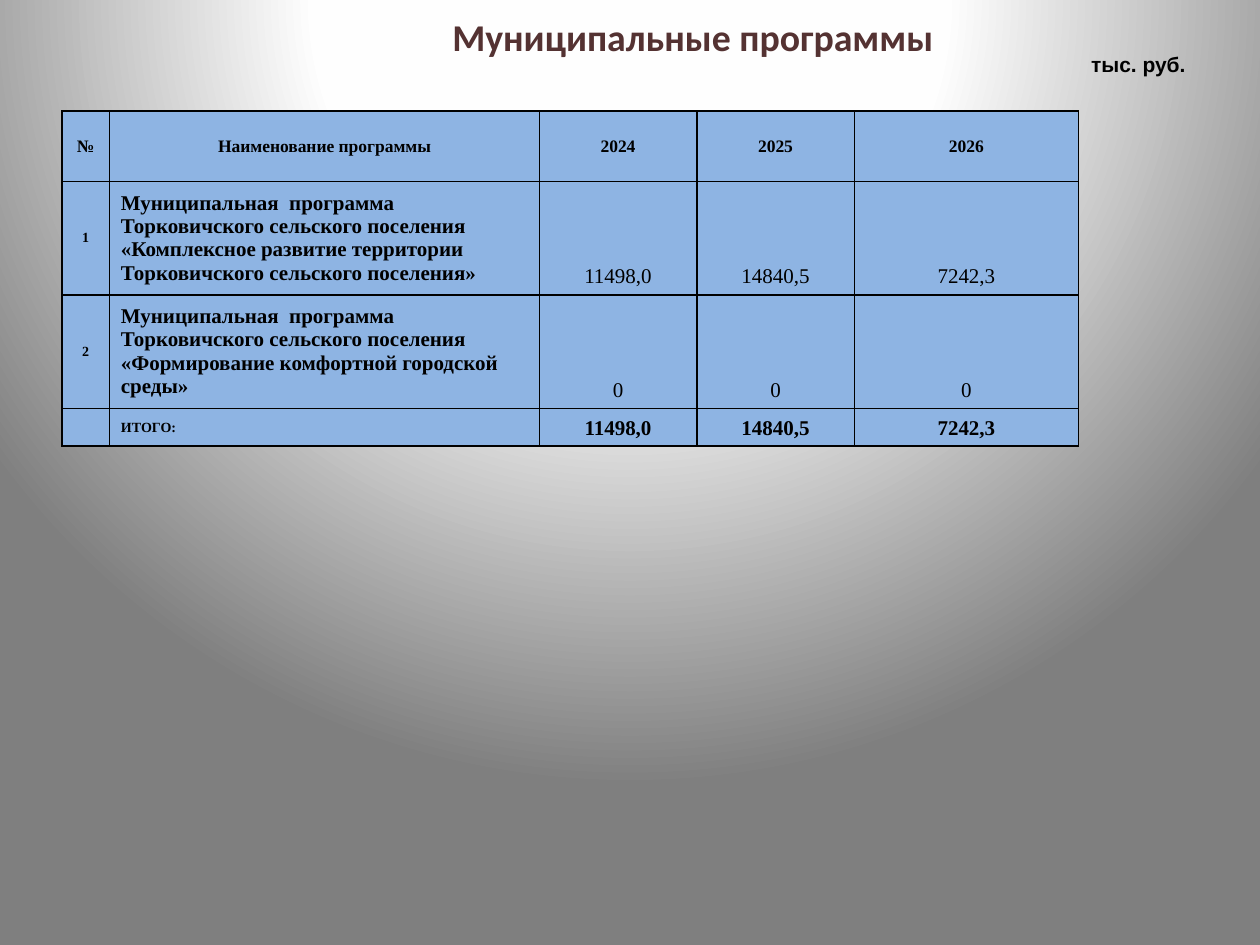
from dataclasses import dataclass

import lxml.etree
import pptx
import pptx.dml.color
import pptx.enum.text
import pptx.oxml.ns
import pptx.presentation
import pptx.slide
import pptx.table
import pptx.text.text
import pptx.util
from pptx.util import Inches

qn = pptx.oxml.ns.qn
Align = pptx.enum.text.PP_ALIGN
Anchor = pptx.enum.text.MSO_ANCHOR


@dataclass(frozen=True)
class TextStyle:
    size: float
    bold: bool = True
    color: str = "000000"
    font: str = "Times New Roman"
    align: Align = Align.CENTER
    anchor: Anchor = Anchor.MIDDLE


@dataclass(frozen=True)
class Theme:
    cell_fill: str = "8EB4E3"
    border: str = "000000"
    border_width: float = 1
    background: tuple = ((0, "FFFFFF"), (40, "FEFEFE"), (100, "7F7F7F"))
    title: TextStyle = TextStyle(21.6, color="543232", font="Calibri")
    unit: TextStyle = TextStyle(12, font="Arial")
    header: TextStyle = TextStyle(10)
    number: TextStyle = TextStyle(8)
    name: TextStyle = TextStyle(12, align=Align.LEFT)
    amount: TextStyle = TextStyle(12, bold=False, anchor=Anchor.BOTTOM)
    total_label: TextStyle = TextStyle(8, align=Align.LEFT)
    total: TextStyle = TextStyle(12, anchor=Anchor.BOTTOM)


@dataclass(frozen=True)
class Row:
    height: float
    texts: tuple[str, ...]
    styles: tuple[TextStyle, ...]


THEME = Theme()
COLUMN_WIDTHS = (0.38, 3.41, 1.25, 1.25, 1.78)
PROGRAM_STYLES = (THEME.number, THEME.name) + (THEME.amount,) * 3
ROWS = (
    Row(0.56, ("№", "Наименование программы", "2024", "2025", "2026"),
        (THEME.header,) * 5),
    Row(0.84, ("1", "Муниципальная  программа Торковичского сельского поселения "
               "«Комплексное развитие территории Торковичского сельского поселения»",
               "11498,0", "14840,5", "7242,3"), PROGRAM_STYLES),
    Row(0.84, ("2", "Муниципальная  программа Торковичского сельского поселения "
               "«Формирование комфортной городской среды»",
               "0", "0", "0"), PROGRAM_STYLES),
    Row(0.29, ("", "ИТОГО:", "11498,0", "14840,5", "7242,3"),
        (THEME.number, THEME.total_label) + (THEME.total,) * 3),
)


def write_text(frame: pptx.text.text.TextFrame, text: str, style: TextStyle) -> None:
    paragraph = frame.paragraphs[0]
    paragraph.text = text
    paragraph.alignment = style.align
    font = paragraph.font
    font.name = style.font
    font.size = pptx.util.Pt(style.size)
    font.bold = style.bold
    font.color.rgb = pptx.dml.color.RGBColor.from_string(style.color)
    if not text:  # an empty line takes its height from the end mark
        lxml.etree.SubElement(paragraph._p, qn("a:endParaRPr"),
                              sz=str(int(style.size * 100)))


def add_label(slide: pptx.slide.Slide, text: str, style: TextStyle,
              left: float, top: float, width: float, height: float,
              wrap: bool = True) -> pptx.text.text.TextFrame:
    box = slide.shapes.add_textbox(Inches(left), Inches(top),
                                   Inches(width), Inches(height))
    frame = box.text_frame
    frame.word_wrap = wrap
    frame.vertical_anchor = style.anchor
    write_text(frame, text, style)
    return frame


def set_borders(cell: pptx.table._Cell) -> None:
    properties = cell._tc.get_or_add_tcPr()
    for index, side in enumerate(("a:lnL", "a:lnR", "a:lnT", "a:lnB")):
        line = lxml.etree.Element(qn(side), w=str(pptx.util.Pt(THEME.border_width)))
        fill = lxml.etree.SubElement(line, qn("a:solidFill"))
        lxml.etree.SubElement(fill, qn("a:srgbClr"), val=THEME.border)
        properties.insert(index, line)


def add_program_table(slide: pptx.slide.Slide, left: float, top: float) -> None:
    table = slide.shapes.add_table(
        len(ROWS), len(COLUMN_WIDTHS), Inches(left), Inches(top),
        Inches(sum(COLUMN_WIDTHS)), Inches(sum(row.height for row in ROWS))).table
    table.first_row = table.horz_banding = False
    for column, width in zip(table.columns, COLUMN_WIDTHS):
        column.width = Inches(width)
    for table_row, row in zip(table.rows, ROWS):
        table_row.height = Inches(row.height)
        for cell, text, style in zip(table_row.cells, row.texts, row.styles):
            cell.margin_left = cell.margin_right = Inches(0.09)
            cell.margin_top = cell.margin_bottom = Inches(0.05)
            cell.vertical_anchor = style.anchor
            cell.fill.solid()
            cell.fill.fore_color.rgb = pptx.dml.color.RGBColor.from_string(THEME.cell_fill)
            set_borders(cell)
            write_text(cell.text_frame, text, style)


def set_radial_background(slide: pptx.slide.Slide) -> None:
    """Fill the background with circles centred above the slide."""
    slide.background.fill.gradient()
    gradient = next(slide.element.iter(qn("a:gradFill")))
    for child in list(gradient):
        gradient.remove(child)
    stops = lxml.etree.SubElement(gradient, qn("a:gsLst"))
    for position, color in THEME.background:
        stop = lxml.etree.SubElement(stops, qn("a:gs"), pos=str(position * 1000))
        lxml.etree.SubElement(stop, qn("a:srgbClr"), val=color)
    circle = lxml.etree.SubElement(gradient, qn("a:path"), path="circle")
    lxml.etree.SubElement(circle, qn("a:fillToRect"),
                          l="50000", t="-80000", r="50000", b="180000")


def main() -> None:
    presentation = pptx.Presentation()
    presentation.slide_width = Inches(10)
    presentation.slide_height = Inches(7.5)
    slide = presentation.slides.add_slide(presentation.slide_layouts[6])
    set_radial_background(slide)
    title = add_label(slide, "Муниципальные программы", THEME.title, 1, 0.15, 9, 0.6)
    title.margin_top = 0
    title.margin_bottom = Inches(0.32)
    add_label(slide, "тыс. руб.", THEME.unit, 8.33, 0.38, 1.41, 0.25, wrap=False)
    add_program_table(slide, 0.49, 0.88)
    presentation.save("out.pptx")


if __name__ == "__main__":
    main()
